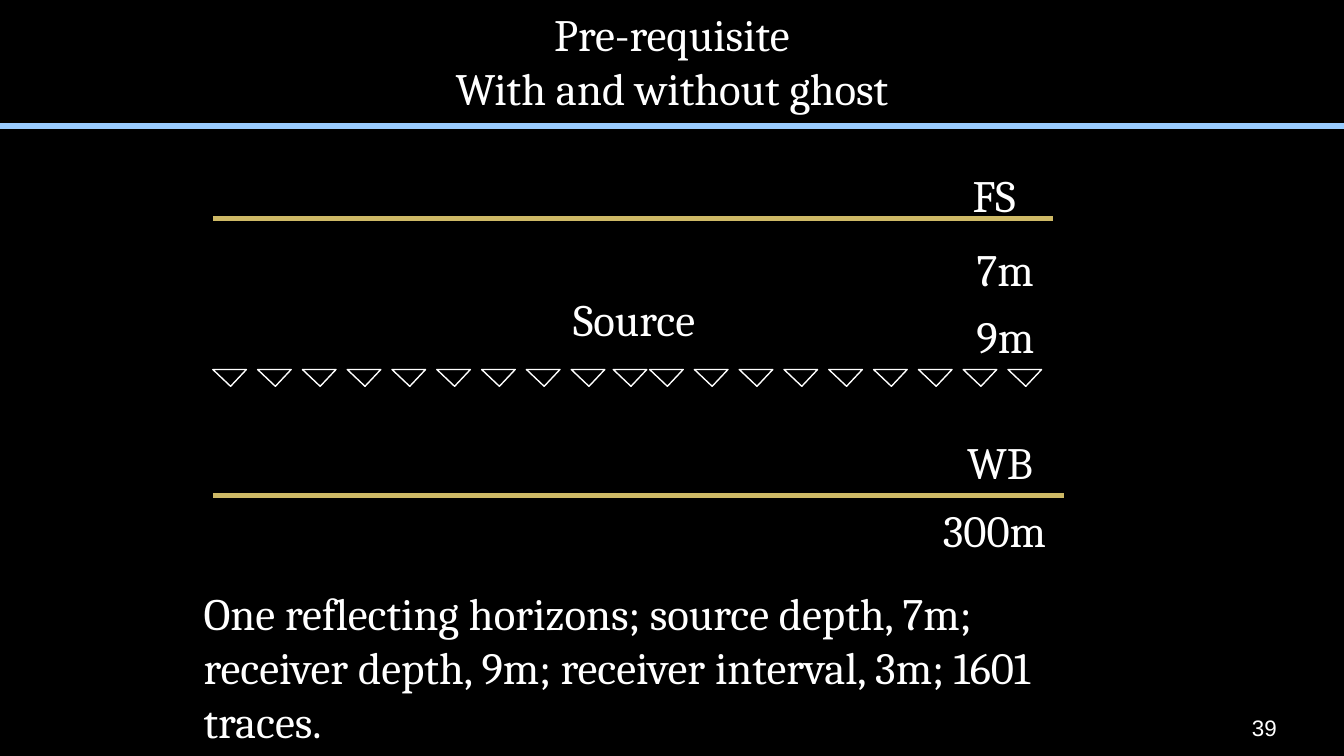
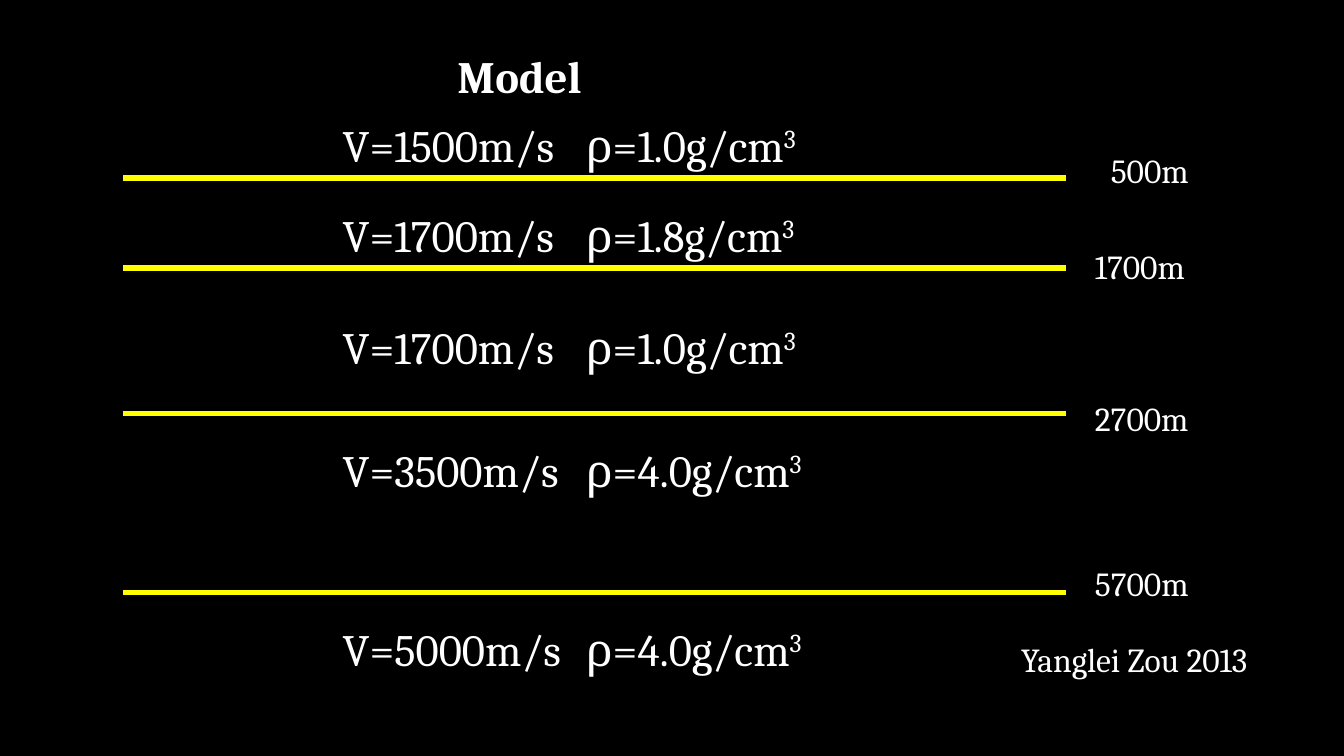
import dataclasses

import pptx
import pptx.dml.color
import pptx.enum.shapes
import pptx.enum.text
import pptx.oxml.ns
import pptx.oxml.xmlchemy
import pptx.util

Pt = pptx.util.Pt
Anchor = pptx.enum.text.MSO_ANCHOR
Align = pptx.enum.text.PP_ALIGN


@dataclasses.dataclass(frozen=True)
class Theme:
    background: str = "000000"
    text: str = "FFFFFF"
    title_rule: str = "99CCFF"
    horizon: str = "CEB966"
    layer: str = "FFFF00"
    serif: str = "Cambria"
    sans: str = "Arial"
    body: int = 24
    label: int = 18
    footer: int = 12
    rule_width: float = 3
    receiver_width: float = 0.75


THEME = Theme()


def color(value):
    return pptx.dml.color.RGBColor.from_string(value)


def apply(target, values):
    for name, value in values.items():
        setattr(target, name, value)


def add_slide(presentation):
    slide = presentation.slides.add_slide(presentation.slide_layouts[6])
    slide.background.fill.solid()
    slide.background.fill.fore_color.rgb = color(THEME.background)
    return slide


def style_run(run, size, font, bold=None):
    apply(run.font, {"size": Pt(size), "name": font, "bold": bold})
    run.font.color.rgb = color(THEME.text)


def add_text(slide, box, lines, size=THEME.body, font=THEME.serif, bold=None,
             align=None, anchor=Anchor.TOP, margins=None):
    shape = slide.shapes.add_textbox(*map(Pt, box))
    frame = shape.text_frame
    apply(frame, {"word_wrap": True, "vertical_anchor": anchor, **(margins or {})})
    for index, line in enumerate(lines):
        paragraph = frame.add_paragraph() if index else frame.paragraphs[0]
        paragraph.alignment = align
        run = paragraph.add_run()
        run.text = line
        style_run(run, size, font, bold)
    return shape


def add_rule(slide, left, right, y, line_color):
    line = slide.shapes.add_connector(
        pptx.enum.shapes.MSO_CONNECTOR.STRAIGHT, Pt(left), Pt(y), Pt(right), Pt(y))
    line.line.color.rgb = color(line_color)
    line.line.width = Pt(THEME.rule_width)
    line.element.spPr.append(pptx.oxml.xmlchemy.OxmlElement("a:effectLst"))


def add_receiver(slide, left, top):
    shape = slide.shapes.add_shape(
        pptx.enum.shapes.MSO_SHAPE.ISOSCELES_TRIANGLE, Pt(left), Pt(top), Pt(18), Pt(9))
    shape.shadow.inherit = False
    shape.adjustments[0] = 0.53
    shape.element.spPr.find(pptx.oxml.ns.qn("a:xfrm")).set("flipV", "1")
    shape.fill.background()
    shape.line.color.rgb = color(THEME.text)
    shape.line.width = Pt(THEME.receiver_width)


def add_properties(slide, top, velocity, density):
    shape = add_text(slide, (176.5, top, 336, 36),
                     [f"V={velocity}m/s\tρ={density}g/cm"])
    paragraph = shape.text_frame.paragraphs[0]
    tabs = pptx.oxml.xmlchemy.OxmlElement("a:tabLst")
    stop = pptx.oxml.xmlchemy.OxmlElement("a:tab")
    stop.set("pos", str(Pt(130)))
    stop.set("algn", "l")
    tabs.append(stop)
    paragraph._p.get_or_add_pPr().append(tabs)
    exponent = paragraph.add_run()
    exponent.text = "3"
    style_run(exponent, THEME.body, THEME.serif)
    exponent._r.get_or_add_rPr().set("baseline", "30000")


def build_ghost_slide(presentation):
    slide = add_slide(presentation)
    add_text(slide, (72, 0, 576, 65.5), ["Pre-requisite", "With and without ghost"],
             align=Align.CENTER)
    add_rule(slide, 0, 720, 67.5, THEME.title_rule)
    add_rule(slide, 114, 564, 117, THEME.horizon)
    add_rule(slide, 114, 570, 265.5, THEME.horizon)

    spread = 9
    pitch = 24
    for start in (114, 348):
        for index in range(spread):
            add_receiver(slide, start + index * pitch, 198)
    add_receiver(slide, 328.5, 198)

    for left, top, width, label in (
        (514, 86, 45.5, "FS"),
        (516, 126, 48, "7m"),
        (516, 162, 48, "9m"),
        (511, 229.5, 58.5, "WB"),
        (498, 265.5, 72, "300m"),
    ):
        add_text(slide, (left, top, width, 36), [label], anchor=Anchor.MIDDLE)
    add_text(slide, (300, 153, 87, 36), ["Source"])
    add_text(slide, (102, 310.5, 477.5, 94.5), [
        "One reflecting horizons; source depth, 7m; receiver depth, 9m; "
        "receiver interval, 3m; 1601 traces."])
    add_text(slide, (624, 379, 60, 21.5), ["39"], THEME.footer, THEME.sans,
             align=Align.RIGHT, anchor=Anchor.BOTTOM,
             margins={"margin_left": 0, "margin_right": 0})


def build_model_slide(presentation):
    slide = add_slide(presentation)
    add_text(slide, (238, 22.5, 124.5, 36), ["Model"], bold=True)
    for y, left, top, depth in (
        (95.5, 588, 76.5, "500m"),
        (143.5, 579.5, 128, "1700m"),
        (221.5, 579.5, 209.5, "2700m"),
        (317.5, 579.5, 298, "5700m"),
    ):
        add_rule(slide, 66, 571, y, THEME.layer)
        add_text(slide, (left, top, 67, 29), [depth], THEME.label)
    for top, velocity, density in (
        (59.5, 1500, "1.0"),
        (107.5, 1700, "1.8"),
        (167.5, 1700, "1.0"),
        (233.5, 3500, "4.0"),
        (329.5, 5000, "4.0"),
    ):
        add_properties(slide, top, velocity, density)
    add_text(slide, (540, 338.5, 154, 29), ["Yanglei Zou 2013"], THEME.label)


def main():
    presentation = pptx.Presentation()
    apply(presentation, {"slide_width": Pt(720), "slide_height": Pt(405)})
    build_ghost_slide(presentation)
    build_model_slide(presentation)
    presentation.save("out.pptx")


if __name__ == "__main__":
    main()
